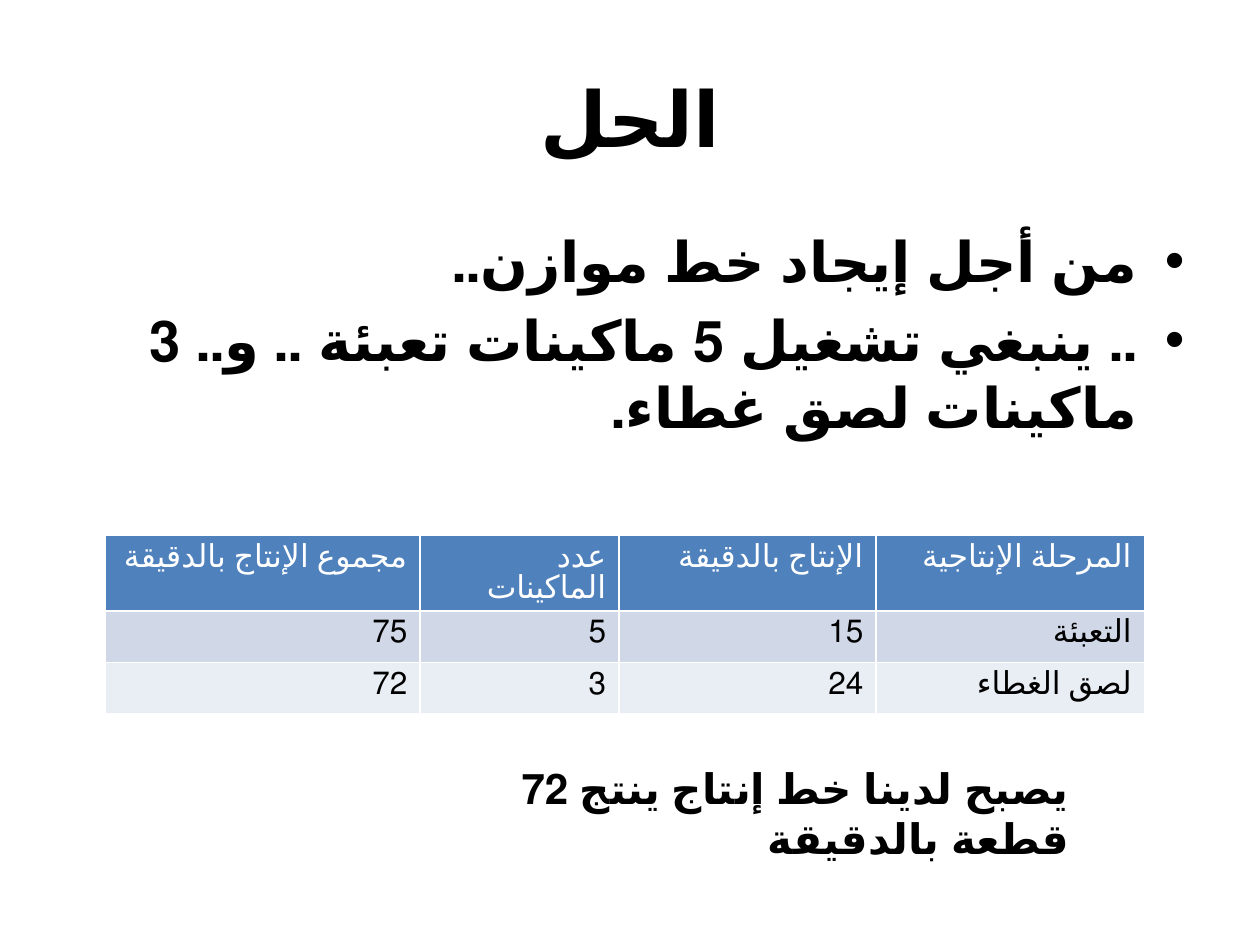
from dataclasses import dataclass
from typing import NamedTuple

from lxml.etree import SubElement
from pptx import Presentation
from pptx.dml.color import RGBColor
from pptx.enum.lang import MSO_LANGUAGE_ID as Language
from pptx.enum.text import MSO_ANCHOR as Anchor, MSO_AUTO_SIZE as AutoSize, PP_ALIGN as Align
from pptx.oxml.ns import qn
from pptx.util import Pt


class Box(NamedTuple):
    left: float
    top: float
    width: float
    height: float

    def points(self) -> tuple:
        return tuple(Pt(value) for value in self)


@dataclass(frozen=True)
class Theme:
    font: str = "Calibri"
    ink: str = "000000"
    header_ink: str = "FFFFFF"
    header_fill: str = "4F81BD"
    band_fills: tuple = ("D0D8E8", "E9EDF4")
    title_size: float = 44
    body_size: float = 32
    note_size: float = 24
    table_size: float = 18
    bullet_indent: float = 27


@dataclass(frozen=True)
class TableRow:
    height: float
    fill: str
    ink: str
    cells: tuple


THEME = Theme()
TITLE_BOX = Box(36, 21.6, 648, 90)
BODY_BOX = Box(36, 126, 648, 356.4)
TABLE_BOX = Box(60, 306, 594, 88.8)
NOTE_BOX = Box(252, 432, 366, 36)

BODY_LINES = (
    "من أجل إيجاد خط موازن..",
    ".. ينبغي تشغيل 5 ماكينات تعبئة .. و.. 3 ماكينات لصق غطاء.",
)
COLUMN_WIDTHS = (180, 113.6, 147, 153.4)
TABLE_ROWS = (
    TableRow(30, THEME.header_fill, THEME.header_ink,
             ("مجموع الإنتاج بالدقيقة", "عدد الماكينات", "الإنتاج بالدقيقة", "المرحلة الإنتاجية")),
    TableRow(29.4, THEME.band_fills[0], THEME.ink, ("75", "5", "15", "التعبئة")),
    TableRow(29.4, THEME.band_fills[1], THEME.ink, ("72", "3", "24", "لصق الغطاء")),
)


def write_text(paragraph, text: str, *, size: float, color: str = THEME.ink,
               bold: bool = True, align=Align.RIGHT, bullet: bool = False) -> None:
    """Write one right-to-left Arabic paragraph, with a hanging bullet if asked."""
    run = paragraph.add_run()
    run.text = text
    run.font.name = THEME.font
    run.font.language_id = Language.ARABIC
    run.font.size = Pt(size)
    run.font.bold = bold
    run.font.color.rgb = RGBColor.from_string(color)
    paragraph.alignment = align
    properties = paragraph._p.get_or_add_pPr()
    properties.set("rtl", "1")
    if bullet:
        paragraph.space_before = Pt(size * 0.2)
        properties.set("marL", str(Pt(THEME.bullet_indent)))
        properties.set("indent", str(-Pt(THEME.bullet_indent)))
        SubElement(properties, qn("a:buFont")).set("typeface", "Arial")
        SubElement(properties, qn("a:buChar")).set("char", "•")


def add_title(slide, text: str) -> None:
    title = slide.shapes.title
    title.left, title.top, title.width, title.height = TITLE_BOX.points()
    title.text_frame.vertical_anchor = Anchor.MIDDLE
    write_text(title.text_frame.paragraphs[0], text, size=THEME.title_size, align=Align.CENTER)


def add_text_box(slide, box: Box, lines: tuple, *, grow: bool = False, **text_format) -> None:
    frame = slide.shapes.add_textbox(*box.points()).text_frame
    frame.word_wrap = True
    frame.auto_size = AutoSize.SHAPE_TO_FIT_TEXT if grow else AutoSize.NONE
    for index, line in enumerate(lines):
        paragraph = frame.add_paragraph() if index else frame.paragraphs[0]
        write_text(paragraph, line, **text_format)


def add_production_table(slide) -> None:
    table = slide.shapes.add_table(
        len(TABLE_ROWS), len(COLUMN_WIDTHS), *TABLE_BOX.points()).table
    for column, width in zip(table.columns, COLUMN_WIDTHS):
        column.width = Pt(width)
    for row, content in zip(table.rows, TABLE_ROWS):
        row.height = Pt(content.height)
        for cell, text in zip(row.cells, content.cells):
            cell.fill.solid()
            cell.fill.fore_color.rgb = RGBColor.from_string(content.fill)
            write_text(cell.text_frame.paragraphs[0], text, size=THEME.table_size,
                       color=content.ink, bold=False)


def main() -> None:
    presentation = Presentation()
    presentation.slide_width, presentation.slide_height = Pt(720), Pt(540)
    title_only = presentation.slide_layouts[5]
    slide = presentation.slides.add_slide(title_only)
    add_title(slide, "الحل")
    add_text_box(slide, BODY_BOX, BODY_LINES, size=THEME.body_size, bullet=True)
    add_production_table(slide)
    add_text_box(slide, NOTE_BOX, ("يصبح لدينا خط إنتاج ينتج 72 قطعة بالدقيقة",),
                 size=THEME.note_size, grow=True)
    presentation.save("out.pptx")


if __name__ == "__main__":
    main()
